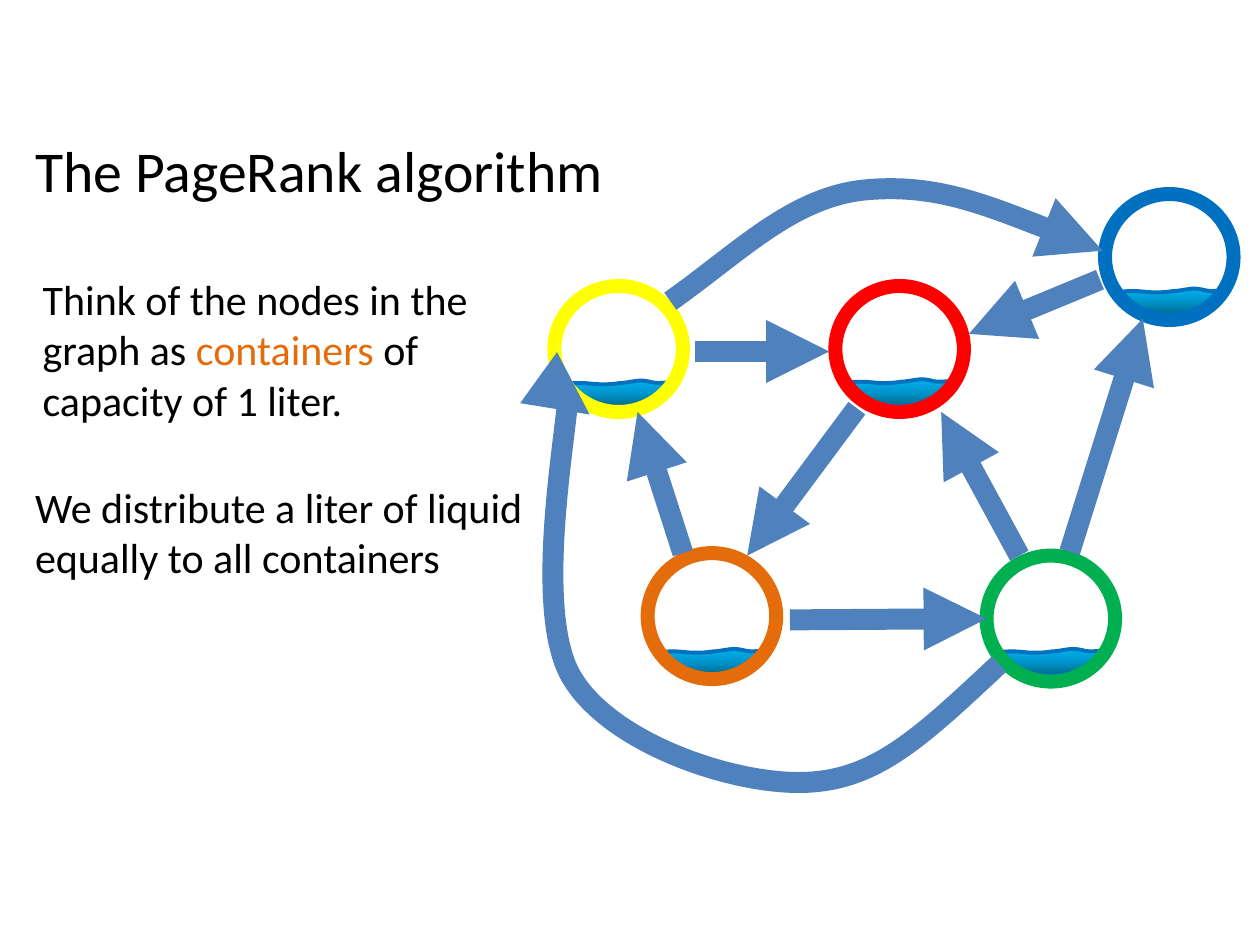
from lxml.etree import SubElement
from pptx import Presentation
from pptx.dml.color import RGBColor
from pptx.enum.shapes import MSO_CONNECTOR as Connector, MSO_SHAPE as Preset
from pptx.enum.text import MSO_AUTO_SIZE as AutoSize
from pptx.oxml.ns import qn
from pptx.util import Inches, Pt

COLORS = {
    "text": "000000", "arrow": "4F81BD", "surface": "0070C0",
    "deep": "00688E", "middle": "0094CA", "top": "00B0F0",
    "blue": "0070C0", "red": "FF0000", "orange": "E46C0A",
    "yellow": "FFFF00", "green": "00B050",
}

# Container: colour, ring corner, water corner
CONTAINERS = [
    ("blue", (8.77, 1.54), (8.89, 2.29)),
    ("red", (6.63, 2.27), (6.73, 3.01)),
    ("orange", (5.14, 4.39), (5.24, 5.15)),
    ("yellow", (4.4, 2.27), (4.5, 3.02)),
    ("green", (7.83, 4.41), (7.93, 5.15)),
]

# Water outline relative to its corner: a start, then three points per curve
WATER_SIZE = (0.84, 0.21)
WATER = [
    (0, 0.03),
    (0.03, 0.02), (0.07, 0.02), (0.12, 0.02),
    (0.16, 0.02), (0.22, 0.03), (0.27, 0.03),
    (0.32, 0.03), (0.36, 0.03), (0.42, 0.02),
    (0.47, 0.02), (0.54, 0), (0.59, 0),
    (0.64, 0), (0.68, 0.02), (0.72, 0.02),
    (0.76, 0.02), (0.83, 0.01), (0.84, 0.02),
    (0.85, 0.03), (0.82, 0.06), (0.8, 0.07),
    (0.78, 0.09), (0.76, 0.1), (0.73, 0.12),
    (0.71, 0.13), (0.68, 0.15), (0.64, 0.17),
    (0.61, 0.18), (0.57, 0.19), (0.53, 0.2),
    (0.49, 0.2), (0.46, 0.21), (0.41, 0.21),
    (0.37, 0.21), (0.31, 0.2), (0.27, 0.2),
    (0.23, 0.19), (0.21, 0.18), (0.18, 0.17),
    (0.16, 0.16), (0.14, 0.15), (0.12, 0.14),
    (0.1, 0.12), (0.06, 0.09), (0.04, 0.08),
]

# Straight links: tail end, arrow end
LINKS = [
    ((8.73, 2.22), (7.69, 2.65)),  # blue to red
    ((8.49, 4.38), (9.07, 2.53)),  # green to blue
    ((8.09, 4.41), (7.47, 3.27)),  # green to red
    ((6.27, 4.92), (7.83, 4.91)),  # orange to green
    ((5.42, 4.39), (5.06, 3.27)),  # orange to yellow
    ((5.52, 2.79), (6.58, 2.79)),  # yellow to red
    ((6.8, 3.24), (5.93, 4.41)),   # red to orange
]

# Curved links: corner, size, points
CURVED_LINKS = [
    # yellow to blue
    ((5.32, 1.5), (3.43, 0.89), [
        (5.32, 2.39),
        (5.86, 2.01), (6.27, 1.58), (6.84, 1.51),
        (7.41, 1.45), (8.09, 1.72), (8.75, 1.99)]),
    # green to yellow
    ((4.39, 3.01), (3.54, 3.21), [
        (7.93, 5.27),
        (7.3, 5.86), (6.95, 6.19), (6.39, 6.21),
        (5.82, 6.23), (4.85, 5.9), (4.54, 5.38),
        (4.23, 4.87), (4.49, 3.48), (4.51, 3.13),
        (4.54, 2.78), (4.64, 3.27), (4.68, 3.29)]),
]


def rgb(name):
    return RGBColor.from_string(COLORS[name])


class GraphSlide:
    font = "Calibri"
    ring_size = (1.02, 1)
    ring_width = 8
    arrow_width = 12

    def __init__(self, slide):
        self.slide = slide
        self.shapes = slide.shapes

    def stroke(self, shape, color, width):
        shape.line.color.rgb = rgb(color)
        shape.line.width = Pt(width)

    def arrowhead(self, shape):
        SubElement(shape.line._get_or_add_ln(), qn("a:tailEnd"), type="triangle")

    def curve(self, corner, size, points):
        """Freeform whose segments are cubic curves."""
        builder = self.shapes.build_freeform(*map(Inches, points[0]))
        builder.add_line_segments(
            [tuple(map(Inches, point)) for point in points[3::3]], close=False)
        shape = builder.convert_to_shape()
        shape.left, shape.top = map(Inches, corner)
        shape.width, shape.height = map(Inches, size)
        shape.shadow.inherit = False

        outline = next(shape.element.iter(qn("a:path")))
        outline.clear()
        outline.set("w", str(shape.width))
        outline.set("h", str(shape.height))
        steps = [("a:moveTo", points[:1])]
        steps += [("a:cubicBezTo", points[i:i + 3]) for i in range(1, len(points), 3)]
        for tag, step_points in steps:
            step = SubElement(outline, qn(tag))
            for x, y in step_points:
                SubElement(step, qn("a:pt"), x=str(Inches(x) - shape.left),
                           y=str(Inches(y) - shape.top))
        return shape

    def water(self, corner):
        left, top = corner
        water = self.curve(corner, WATER_SIZE, [(left + x, top + y) for x, y in WATER])
        gradient = SubElement(water.element.spPr, qn("a:gradFill"), rotWithShape="1")
        stops = SubElement(gradient, qn("a:gsLst"))
        for percent, color in [(0, "deep"), (50, "middle"), (100, "top")]:
            stop = SubElement(stops, qn("a:gs"), pos=str(percent * 1000))
            SubElement(stop, qn("a:srgbClr"), val=COLORS[color])
        SubElement(gradient, qn("a:lin"), ang=str(270 * 60000), scaled="1")
        water.element.spPr.find(qn("a:custGeom")).addnext(gradient)
        self.stroke(water, "surface", 2.25)

    def ring(self, corner, color):
        ring = self.shapes.add_shape(
            Preset.OVAL, *map(Inches, corner + self.ring_size))
        ring.shadow.inherit = False
        ring.fill.background()
        self.stroke(ring, color, self.ring_width)

    def link(self, start, end):
        link = self.shapes.add_connector(
            Connector.STRAIGHT, *map(Inches, start + end))
        self.stroke(link, "arrow", self.arrow_width)
        self.arrowhead(link)
        SubElement(link.element.spPr, qn("a:effectLst"))

    def curved_link(self, corner, size, points):
        link = self.curve(corner, size, points)
        link.fill.background()
        self.stroke(link, "arrow", self.arrow_width)
        self.arrowhead(link)

    def text(self, box, size, runs, wrap=True):
        frame = self.shapes.add_textbox(*map(Inches, box)).text_frame
        frame.word_wrap = wrap
        frame.auto_size = AutoSize.SHAPE_TO_FIT_TEXT
        for words, color in runs:
            run = frame.paragraphs[0].add_run()
            run.text = words
            run.font.name = self.font
            run.font.size = Pt(size)
            run.font.color.rgb = rgb(color)


def main():
    deck = Presentation()
    deck.slide_width, deck.slide_height = Inches(10), Inches(7.5)
    graph = GraphSlide(deck.slides.add_slide(deck.slide_layouts[6]))

    # Containers with their liquid
    for _, _, water_corner in CONTAINERS:
        graph.water(water_corner)
    for color, ring_corner, _ in CONTAINERS:
        graph.ring(ring_corner, color)

    # Links between the containers
    for start, end in LINKS:
        graph.link(start, end)
    for corner, size, points in CURVED_LINKS:
        graph.curved_link(corner, size, points)

    # Title and explanation
    graph.text((0.18, 1.02, 5.32, 0.66), 33,
               [("The PageRank algorithm", "text")], wrap=False)
    graph.text((0.24, 2.12, 3.93, 1.31), 24, [
        ("Think of the nodes in the graph as ", "text"),
        ("containers", "orange"),
        (" of capacity of 1 liter.", "text")])
    graph.text((0.18, 3.77, 4.1, 1.31), 24, [
        ("We distribute a liter of liquid equally to all containers", "text")])

    deck.save("out.pptx")


if __name__ == "__main__":
    main()
